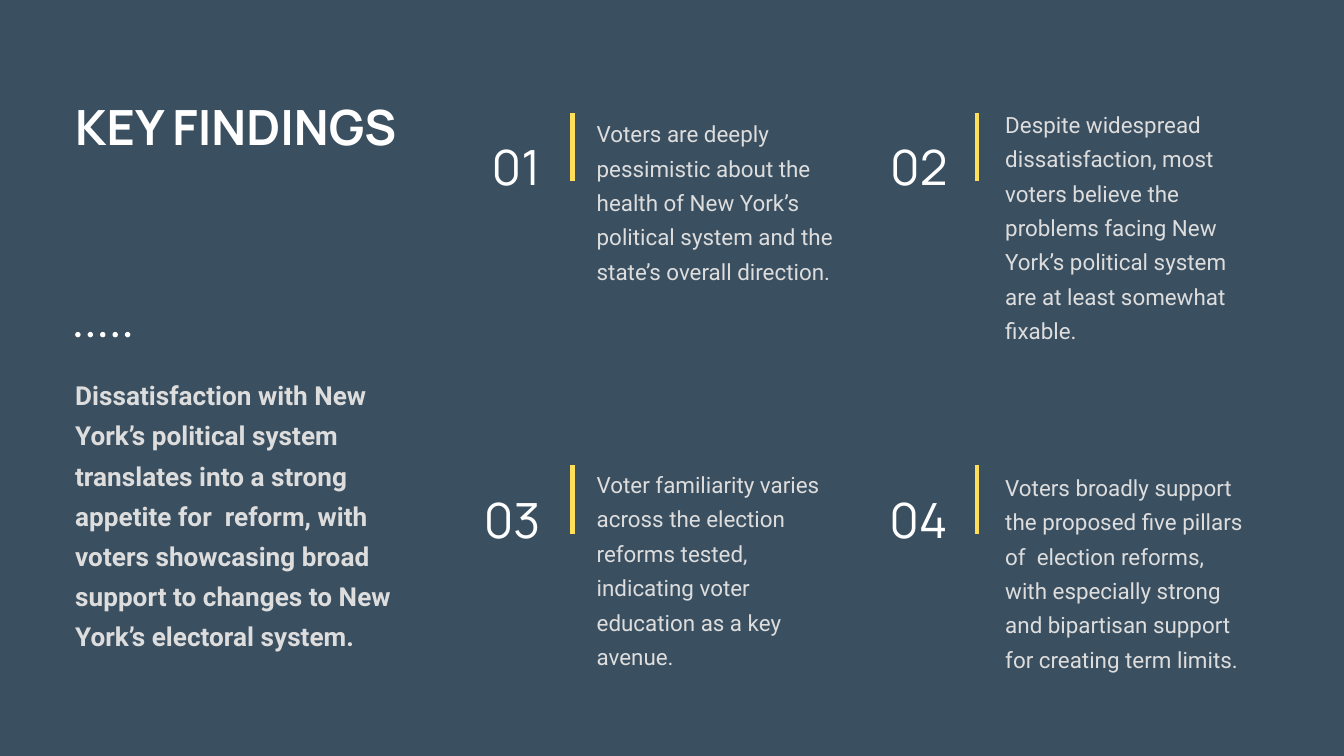
import pptx
import pptx.dml.color
import pptx.enum.shapes
import pptx.enum.text
import pptx.oxml.ns
import pptx.util
from pptx.util import Inches
from lxml import etree

BACKGROUND, WHITE, BODY, YELLOW = "3A4F60", "FFFFFF", "DDDDDD", "FFDE59"
LEFT = pptx.enum.text.PP_ALIGN.LEFT
RIGHT = pptx.enum.text.PP_ALIGN.RIGHT

SUMMARY = (
    "Dissatisfaction with New York’s political system translates into a strong "
    "appetite for  reform, with voters showcasing broad support to changes to "
    "New York’s electoral system."
)

# Columns: left, number width, rule offset, text offset
COLUMNS = [(3.47, 0.55, 0.79, 0.97), (6.47, 0.58, 0.80, 1.01)]
ROW_TOPS = [0.84, 3.46]

# Findings in reading order: text, text offset from the row top, text height
FINDINGS = [
    ("Voters are deeply pessimistic about the health of New York’s political "
     "system and the state’s overall direction.", 0, 1.24),
    ("Despite widespread dissatisfaction, most voters believe the problems "
     "facing New York’s political system are at least somewhat fixable.", -0.07, 1.75),
    ("Voter familiarity varies across the election reforms tested,  indicating "
     "voter education as a key avenue.", -0.01, 1.49),
    ("Voters broadly support the proposed five pillars of  election reforms, "
     "with especially strong and bipartisan support for creating term limits.", 0.01, 1.75),
]


def color(hex_string):
    return pptx.dml.color.RGBColor.from_string(hex_string)


def add_text(slide, box, text, size, font, fill, bold=False, align=LEFT, spacing=1.28):
    frame = slide.shapes.add_textbox(*map(Inches, box)).text_frame
    frame.margin_left = frame.margin_top = frame.margin_right = frame.margin_bottom = 0
    frame.word_wrap = True
    frame.auto_size = pptx.enum.text.MSO_AUTO_SIZE.SHAPE_TO_FIT_TEXT
    frame.text = text
    paragraph = frame.paragraphs[0]
    paragraph.alignment = align
    paragraph.line_spacing = spacing
    run_font = paragraph.runs[0].font
    run_font.name = font
    run_font.size = pptx.util.Pt(size)
    run_font.bold = bold
    run_font.color.rgb = color(fill)


def add_dots(slide, left, top, count=5, diameter=0.04, span=0.37):
    dots = slide.shapes.add_group_shape()
    pitch = span / (count - 1)
    for i in range(count):
        dot = dots.shapes.add_shape(
            pptx.enum.shapes.MSO_SHAPE.OVAL, Inches(left + i * pitch), Inches(top),
            Inches(diameter), Inches(diameter))
        dot.shadow.inherit = False
        dot.fill.solid()
        dot.fill.fore_color.rgb = color(WHITE)
        dot.line.fill.background()


def add_rule(slide, x, top, height=0.51):
    rule = slide.shapes.add_connector(
        pptx.enum.shapes.MSO_CONNECTOR.STRAIGHT,
        Inches(x), Inches(top + height), Inches(x), Inches(top))
    rule.line.color.rgb = color(YELLOW)
    rule.line.width = pptx.util.Pt(2.25)
    etree.SubElement(rule._element.spPr, pptx.oxml.ns.qn("a:effectLst"))


def add_overview(slide, left, top):
    """Title, dotted divider and summary."""
    add_text(slide, (left, top, 2.62, 0.44), "KEY FINDINGS", 26, "Manrope", WHITE, bold=True)
    add_dots(slide, left, top + 1.87)
    add_text(slide, (left, top + 2.16, 2.43, 2.35), SUMMARY, 14, "Roboto", BODY, bold=True)


def add_finding(slide, column, top, number, finding):
    """Number, yellow rule and statement."""
    left, number_width, rule_offset, text_offset = column
    text, text_drop, text_height = finding
    add_rule(slide, left + rule_offset, top)
    add_text(slide, (left, top + 0.01, number_width, 0.44), f"{number:02d}",
             26, "Manrope", WHITE, align=RIGHT, spacing=1.4)
    add_text(slide, (left + text_offset, top + text_drop, 1.83, text_height),
             text, 12, "Roboto", BODY)


def main():
    deck = pptx.Presentation()
    # Widescreen 16:9
    deck.slide_width = Inches(10)
    deck.slide_height = deck.slide_width * 9 // 16
    slide = deck.slides.add_slide(deck.slide_layouts[6])
    slide.background.fill.solid()
    slide.background.fill.fore_color.rgb = color(BACKGROUND)

    add_overview(slide, 0.56, 0.6)
    for i, finding in enumerate(FINDINGS):
        row, column = divmod(i, len(COLUMNS))
        add_finding(slide, COLUMNS[column], ROW_TOPS[row], i + 1, finding)

    deck.save("out.pptx")


if __name__ == "__main__":
    main()
